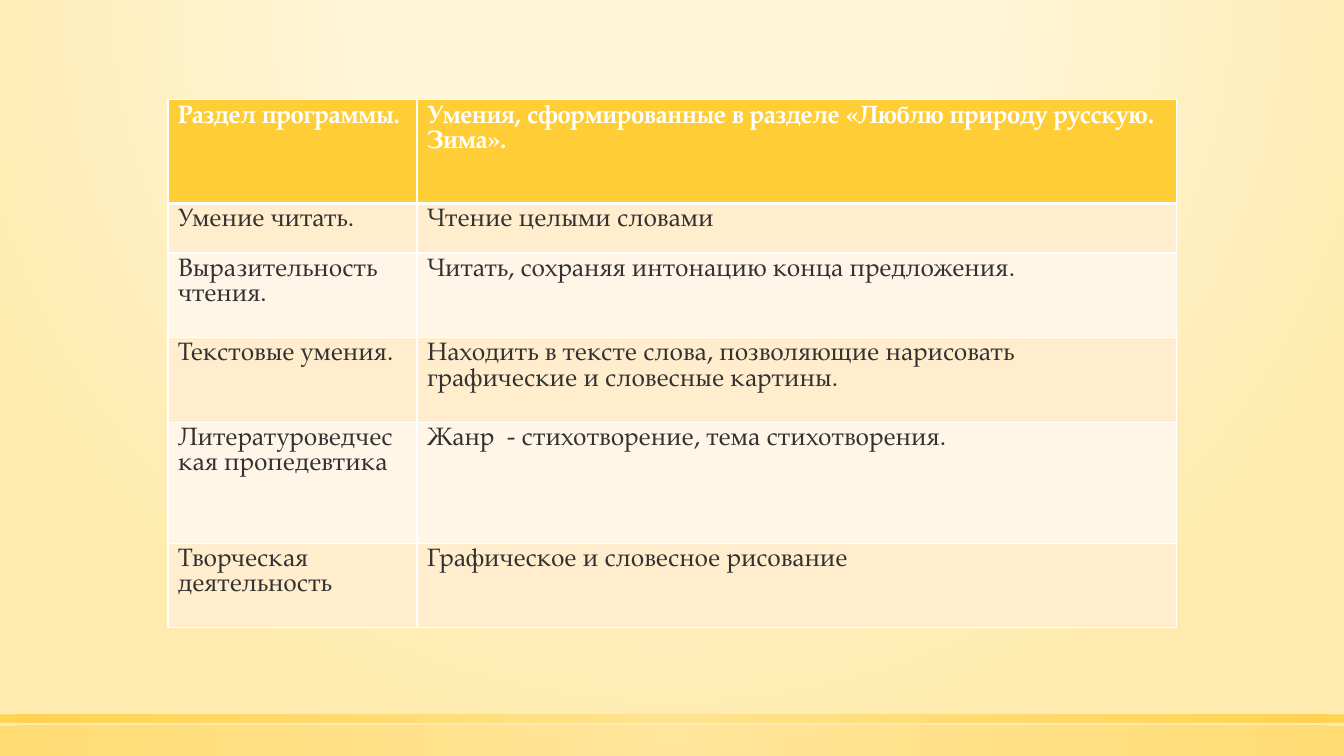
from lxml import etree
from pptx import Presentation
from pptx import util as u
from pptx.dml.color import RGBColor
from pptx.enum import shapes
from pptx.oxml import ns

SLIDE_W, SLIDE_H = u.Inches(13.33), u.Inches(7.5)
FONT = "TeX Gyre Pagella"
WHITE = RGBColor(0xFF, 0xFF, 0xFF)
INK = RGBColor(0x32, 0x32, 0x32)
GOLD = RGBColor(0xFF, 0xCD, 0x36)
LIGHT_GOLD = RGBColor(0xFF, 0xE1, 0x86)
PEACH = RGBColor(0xFF, 0xED, 0xCE)
CREAM = RGBColor(0xFF, 0xF6, 0xE8)
GLOW = RGBColor(0xFF, 0xF5, 0xD7)
SAND = RGBColor(0xFF, 0xEB, 0xAF)

COLUMN_WIDTHS = [2.47, 7.53]
ROW_HEIGHTS = [1.03, 0.49, 0.84, 0.84, 1.2, 0.84]
SKILLS = [
    ("Раздел программы.", "Умения, сформированные в разделе «Люблю природу русскую. Зима»."),
    ("Умение читать.", "Чтение целыми словами"),
    ("Выразительность чтения.", "Читать, сохраняя интонацию конца предложения."),
    ("Текстовые умения.", "Находить в тексте слова, позволяющие нарисовать графические и словесные картины."),
    ("Литературоведческая пропедевтика", "Жанр  - стихотворение, тема стихотворения."),
    ("Творческая деятельность", "Графическое и словесное рисование"),
]


def add_node(parent, tag, **attributes):
    node = etree.SubElement(parent, ns.qn(tag))
    for name, value in attributes.items():
        node.set(name, str(value))
    return node


def radial_fill(fill, properties, stops, focus, opacity=100):
    fill.solid()
    solid = properties.find(ns.qn("a:solidFill"))
    gradient = etree.Element(ns.qn("a:gradFill"), rotWithShape="1")
    stop_list = add_node(gradient, "a:gsLst")
    for position, color in stops:
        stop = add_node(stop_list, "a:gs", pos=position * 1000)
        tint = add_node(stop, "a:srgbClr", val=color)
        if opacity < 100:
            add_node(tint, "a:alpha", val=opacity * 1000)
    circle = add_node(gradient, "a:path", path="circle")
    sides = {side: share * 1000 for side, share in zip("ltrb", focus)}
    add_node(circle, "a:fillToRect", **sides)
    properties.replace(solid, gradient)


def paint_background(slide):
    fill = slide.background.fill
    fill.solid()
    properties = slide.element.find(".//" + ns.qn("p:bgPr"))
    radial_fill(fill, properties, [(0, GLOW), (40, GLOW), (100, SAND)], (50, -80, 50, 180))


def add_band(slide, top, height, opacity):
    band = slide.shapes.add_shape(
        shapes.MSO_SHAPE.RECTANGLE, 0, int(SLIDE_H * top), SLIDE_W, int(SLIDE_H * height))
    band.shadow.inherit = False
    band.line.fill.background()
    radial_fill(band.fill, band.element.spPr, [(0, LIGHT_GOLD), (100, GOLD)],
                (50, 50, 50, 50), opacity)


def write(frame, words, size=18, color=INK, bold=False):
    frame.word_wrap = True
    paragraph = frame.paragraphs[0]
    paragraph.line_spacing = u.Pt(size)
    run = paragraph.add_run()
    run.text = words
    run.font.name = FONT
    run.font.size = u.Pt(size)
    run.font.bold = bold
    run.font.color.rgb = color


def add_borders(cell, **widths):
    properties = cell._tc.get_or_add_tcPr()
    for side in "LRTB":
        line = add_node(properties, "a:ln" + side, w=u.Pt(widths.get(side, 1)))
        add_node(add_node(line, "a:solidFill"), "a:srgbClr", val=WHITE)


def add_skills_table(slide):
    table = slide.shapes.add_table(
        len(SKILLS), len(COLUMN_WIDTHS), int(SLIDE_W * 0.125), int(SLIDE_H * 0.132),
        u.Inches(sum(COLUMN_WIDTHS)), u.Inches(sum(ROW_HEIGHTS))).table
    for column, width in zip(table.columns, COLUMN_WIDTHS):
        column.width = u.Inches(width)
    for index, (row, height, entries) in enumerate(zip(table.rows, ROW_HEIGHTS, SKILLS)):
        row.height = u.Inches(height)
        heading = index == 0
        shade = GOLD if heading else PEACH if index % 2 else CREAM
        for cell, words in zip(row.cells, entries):
            add_borders(cell, B=3 if heading else 1, T=3 if index == 1 else 1)
            cell.fill.solid()
            cell.fill.fore_color.rgb = shade
            write(cell.text_frame, words, color=WHITE if heading else INK, bold=heading)


def main():
    deck = Presentation()
    deck.slide_width, deck.slide_height = SLIDE_W, SLIDE_H
    slide = deck.slides.add_slide(deck.slide_layouts[6])
    paint_background(slide)
    add_band(slide, top=0.96, height=0.04, opacity=50)
    add_band(slide, top=0.945, height=0.011, opacity=80)
    add_skills_table(slide)
    deck.save("out.pptx")


if __name__ == "__main__":
    main()
